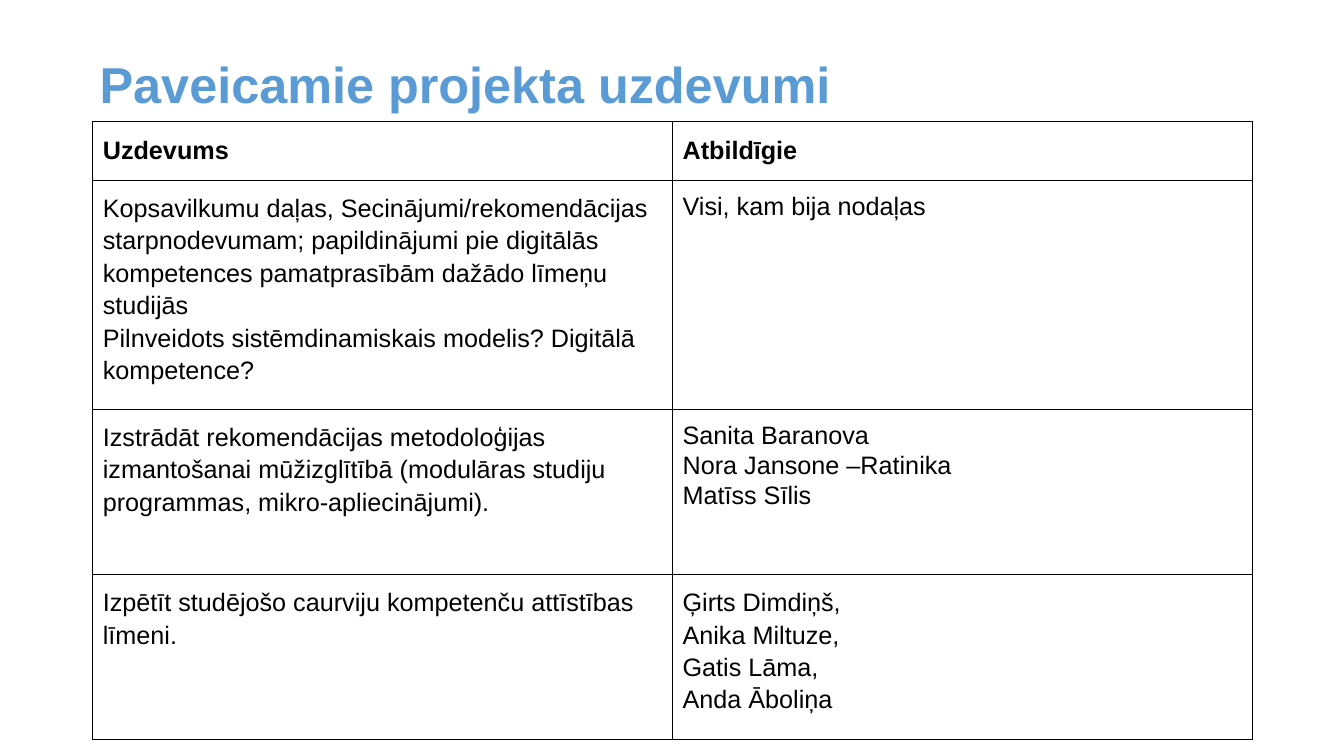
from dataclasses import dataclass

from lxml.etree import SubElement
from pptx import Presentation
from pptx.dml.color import RGBColor
from pptx.enum.text import MSO_ANCHOR
from pptx.oxml.ns import qn
from pptx.slide import Slide
from pptx.table import Table, _Cell
from pptx.text.text import _Paragraph
from pptx.util import Inches, Pt


@dataclass(frozen=True)
class Theme:
    font: str = "Arial"
    title: RGBColor = RGBColor(0x5B, 0x9B, 0xD5)
    ink: RGBColor = RGBColor(0, 0, 0)
    head: int = 36
    body: int = 18
    rule: float = 0.75


@dataclass(frozen=True)
class Entry:
    lines: tuple[str, ...]
    space: float = 1.15


@dataclass(frozen=True)
class Row:
    height: float
    task: Entry
    people: Entry
    bold: bool = False


THEME = Theme()
TITLE = "Paveicamie projekta uzdevumi"
ROWS = (
    Row(0.58, Entry(("Uzdevums",)), Entry(("Atbildīgie",)), bold=True),
    Row(
        2.12,
        Entry((
            "Kopsavilkumu daļas, Secinājumi/rekomendācijas starpnodevumam; "
            "papildinājumi pie digitālās kompetences pamatprasībām dažādo līmeņu studijās",
            "Pilnveidots sistēmdinamiskais modelis? Digitālā kompetence?",
        )),
        Entry(("Visi, kam bija nodaļas",), 1.07),
    ),
    Row(
        1.64,
        Entry((
            "Izstrādāt rekomendācijas metodoloģijas izmantošanai mūžizglītībā "
            "(modulāras studiju programmas, mikro-apliecinājumi).",
        )),
        Entry(("Sanita Baranova", "Nora Jansone –Ratinika", "Matīss Sīlis"), 1.07),
    ),
    Row(
        1.64,
        Entry(("Izpētīt studējošo caurviju kompetenču attīstības līmeni.",)),
        Entry(("Ģirts Dimdiņš,", "Anika Miltuze,", "Gatis Lāma,", "Anda Āboliņa")),
    ),
)


def style(para: _Paragraph, size: int, color: RGBColor, bold: bool, space: float) -> None:
    para.line_spacing = space
    para.font.name = THEME.font
    para.font.size = Pt(size)
    para.font.bold = bold
    para.font.color.rgb = color


def add_title(slide: Slide) -> None:
    box = slide.shapes.add_textbox(Inches(0.89), Inches(0.4), Inches(11.5), Inches(1.45))
    frame = box.text_frame
    frame.word_wrap = True
    frame.vertical_anchor = MSO_ANCHOR.TOP
    frame.margin_top = Inches(0.19)
    frame.text = TITLE
    style(frame.paragraphs[0], THEME.head, THEME.title, True, 0.9)


def add_border(cell: _Cell) -> None:
    props = cell._tc.get_or_add_tcPr()
    for side in ("a:lnL", "a:lnR", "a:lnT", "a:lnB"):
        line = SubElement(props, qn(side), w=str(Pt(THEME.rule)))
        fill = SubElement(line, qn("a:solidFill"))
        SubElement(fill, qn("a:srgbClr"), val=str(THEME.ink))


def fill_cell(cell: _Cell, entry: Entry, bold: bool) -> None:
    add_border(cell)
    cell.fill.background()
    cell.margin_left = cell.margin_right = Inches(0.1)
    cell.margin_top = cell.margin_bottom = Inches(0.1)
    cell.text = "\n".join(entry.lines)
    for para in cell.text_frame.paragraphs:
        style(para, THEME.body, THEME.ink, bold, entry.space)


def add_tasks(slide: Slide) -> None:
    height = sum(row.height for row in ROWS)
    frame = slide.shapes.add_table(
        len(ROWS), 2, Inches(0.92), Inches(1.21), Inches(11.5), Inches(height)
    )
    table: Table = frame.table
    table.first_row = False
    table.horz_banding = False
    for i, row in enumerate(ROWS):
        table.rows[i].height = Inches(row.height)
        for j, entry in enumerate((row.task, row.people)):
            fill_cell(table.cell(i, j), entry, row.bold)


def main() -> None:
    deck = Presentation()
    deck.slide_width = Inches(13.33)
    deck.slide_height = Inches(7.5)
    slide = deck.slides.add_slide(deck.slide_layouts[6])
    add_title(slide)
    add_tasks(slide)
    deck.save("out.pptx")


if __name__ == "__main__":
    main()
